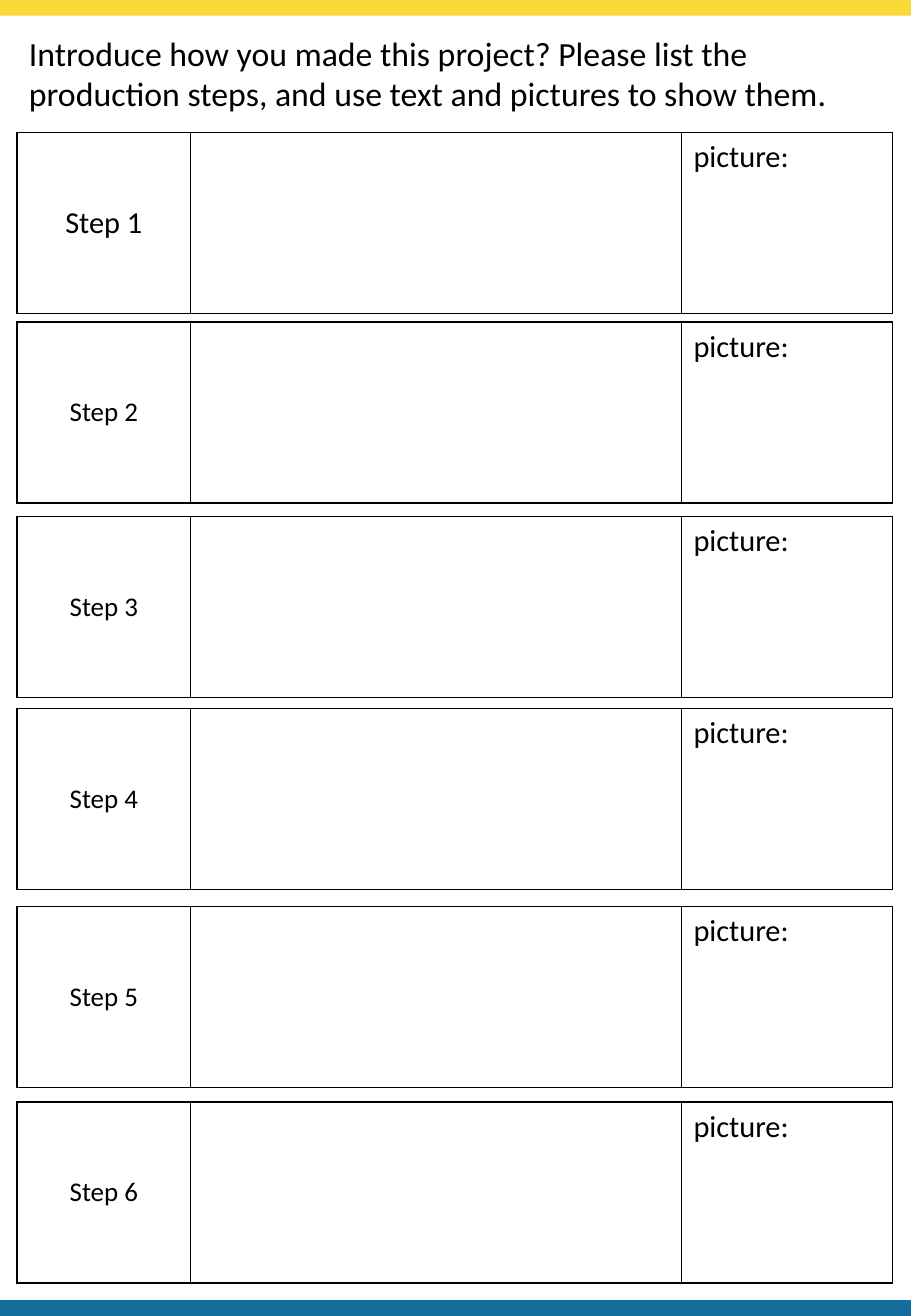
"""Build a project worksheet with six boxed production steps."""
from lxml.etree import SubElement
from pptx import Presentation
from pptx.dml.color import RGBColor
from pptx.enum.shapes import MSO_SHAPE
from pptx.enum.text import MSO_ANCHOR, MSO_AUTO_SIZE, PP_ALIGN
from pptx.oxml.ns import qn
from pptx.util import Inches, Pt

COLORS = {"ink": "000000", "top": "FAD938", "bottom": "136D9F"}
FONT = "Calibri"
INTRO = [
    "Introduce how you made this project? Please list the",
    "production steps, and use text and pictures to show them.",
]
BARS = [("top", -0.01), ("bottom", 10.7)]
STEPS = [
    ("Step 1", 1.09, 18),
    ("Step 2", 2.65, 16),
    ("Step 3", 4.25, 16),
    ("Step 4", 5.83, 16),
    ("Step 5", 7.46, 16),
    ("Step 6", 9.07, 16),
]
PICTURE = "picture:"
WIDTH, HEIGHT, BAR_HEIGHT = 7.5, 10.83, 0.14
LEFT, ROW_HEIGHT = 0.14, 1.49
COLUMNS = [1.43, 4.04, 1.74]


def set_text(p, text, size):
    p.text = text
    p.font.name = FONT
    p.font.size = Pt(size)
    p.font.color.rgb = RGBColor.from_string(COLORS["ink"])


def add_intro(s):
    tf = s.shapes.add_textbox(Inches(LEFT), Inches(0.22), Inches(6.85), Inches(0.77)).text_frame
    tf.word_wrap = False
    tf.auto_size = MSO_AUTO_SIZE.SHAPE_TO_FIT_TEXT
    for i, line in enumerate(INTRO):
        set_text(tf.add_paragraph() if i else tf.paragraphs[0], line, 20)


def add_bar(s, color, top):
    sp = s.shapes.add_shape(MSO_SHAPE.RECTANGLE, 0, Inches(top), Inches(WIDTH), Inches(BAR_HEIGHT))
    sp.shadow.inherit = False
    sp.fill.solid()
    sp.fill.fore_color.rgb = RGBColor.from_string(COLORS[color])
    sp.line.fill.background()


def style_cell(cell):
    tc_pr = cell._tc.get_or_add_tcPr()
    for side in ("a:lnL", "a:lnR", "a:lnT", "a:lnB"):
        ln = SubElement(tc_pr, qn(side), w=str(Pt(1)))
        fill = SubElement(ln, qn("a:solidFill"))
        SubElement(fill, qn("a:srgbClr"), val=COLORS["ink"])
    cell.fill.background()


def add_step(s, label, top, size):
    table = s.shapes.add_table(
        1, len(COLUMNS), Inches(LEFT), Inches(top), Inches(sum(COLUMNS)), Inches(ROW_HEIGHT)
    ).table
    table.first_row = table.horz_banding = False
    for column, width in zip(table.columns, COLUMNS):
        column.width = Inches(width)
    for cell in table.iter_cells():
        style_cell(cell)
    step, picture = table.cell(0, 0), table.cell(0, 2)
    step.vertical_anchor = MSO_ANCHOR.MIDDLE
    set_text(step.text_frame.paragraphs[0], label, size)
    step.text_frame.paragraphs[0].alignment = PP_ALIGN.CENTER
    set_text(picture.text_frame.paragraphs[0], PICTURE, 18)


def main():
    prs = Presentation()
    prs.slide_width, prs.slide_height = Inches(WIDTH), Inches(HEIGHT)
    s = prs.slides.add_slide(prs.slide_layouts[6])
    add_intro(s)
    for bar in BARS:
        add_bar(s, *bar)
    for step in STEPS:
        add_step(s, *step)
    prs.save("out.pptx")


if __name__ == "__main__":
    main()
